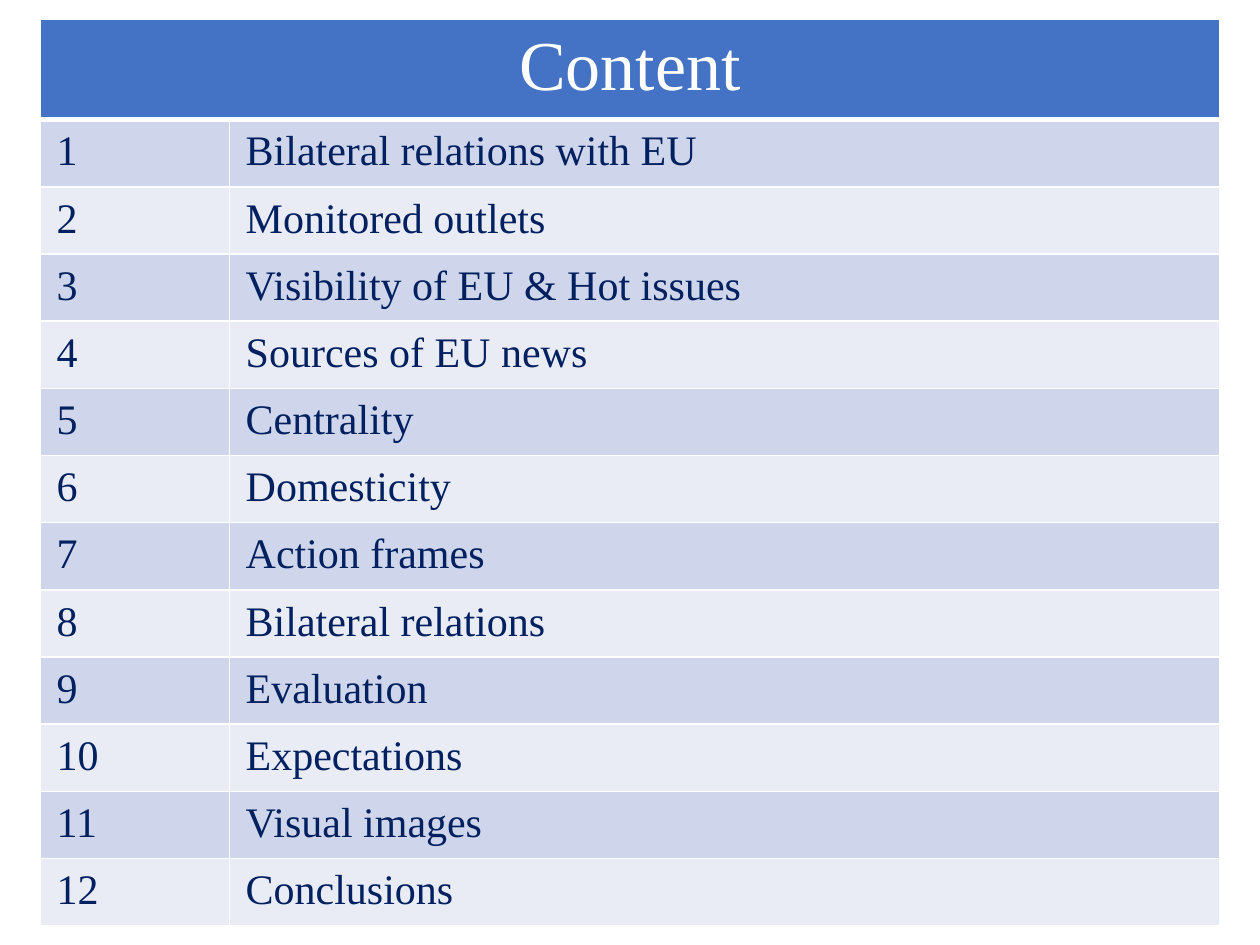
from pptx import Presentation
from pptx.dml.color import RGBColor
from pptx.enum.text import PP_ALIGN
from pptx.oxml.ns import qn
from pptx.util import Inches, Pt
from lxml.etree import SubElement

WHITE = RGBColor(0xFF, 0xFF, 0xFF)
NAVY = RGBColor(0x00, 0x20, 0x60)
BLUE = RGBColor(0x44, 0x72, 0xC4)
BANDS = RGBColor(0xCF, 0xD5, 0xEA), RGBColor(0xE9, 0xEB, 0xF5)

TOPICS = [
    "Bilateral relations with EU",
    "Monitored outlets",
    "Visibility of EU & Hot issues",
    "Sources of EU news",
    "Centrality",
    "Domesticity",
    "Action frames",
    "Bilateral relations",
    "Evaluation",
    "Expectations",
    "Visual images",
    "Conclusions",
]
INSETS = {
    "margin_left": Inches(0.13),
    "margin_right": Inches(0.13),
    "margin_top": Inches(0.07),
    "margin_bottom": Inches(0.07),
}
HEADING_FONT = {"name": "Times New Roman", "size": Pt(40), "bold": False}
TOPIC_FONT = {"name": "Times New Roman", "size": Pt(24), "bold": False}


def add_border(cell, side, width):
    line = SubElement(cell._tc.get_or_add_tcPr(), qn(f"a:ln{side}"), w=str(Pt(width)))
    fill = SubElement(line, qn("a:solidFill"))
    SubElement(fill, qn("a:srgbClr"), val=str(WHITE))


def format_cell(cell, text, font, color, fill, edges):
    cell.text = text
    for name, value in INSETS.items():
        setattr(cell, name, value)
    for side, width in edges.items():
        add_border(cell, side, width)
    cell.fill.solid()
    cell.fill.fore_color.rgb = fill
    for run in cell.text_frame.paragraphs[0].runs:
        for name, value in font.items():
            setattr(run.font, name, value)
        run.font.color.rgb = color


prs = Presentation()
prs.slide_width, prs.slide_height = Inches(10), Inches(7.5)
slide = prs.slides.add_slide(prs.slide_layouts[6])

left, top, width, height = Inches(0.32), Inches(0.15), Inches(9.36), Inches(7.2)
heading_height = Inches(0.8)
topic_height = (height - heading_height) // len(TOPICS)
number_width = Inches(1.5)

contents = slide.shapes.add_table(len(TOPICS) + 1, 2, left, top, width, height).table
contents.columns[0].width = number_width
contents.columns[1].width = width - number_width
for row in contents.rows:
    row.height = topic_height
contents.rows[0].height = heading_height

heading = contents.cell(0, 0)
heading.merge(contents.cell(0, 1))
for cell, text in zip(contents.rows[0].cells, ("Content", "")):
    format_cell(cell, text, HEADING_FONT, WHITE, BLUE, {"L": 1, "R": 1, "T": 1, "B": 3})
heading.text_frame.paragraphs[0].alignment = PP_ALIGN.CENTER

for number, topic in enumerate(TOPICS, start=1):
    edges = {"L": 1, "R": 1, "T": 3 if number == 1 else 1, "B": 1}
    for column, text in enumerate((str(number), topic)):
        band = BANDS[(number - 1) % 2]
        format_cell(contents.cell(number, column), text, TOPIC_FONT, NAVY, band, edges)

prs.save("out.pptx")
